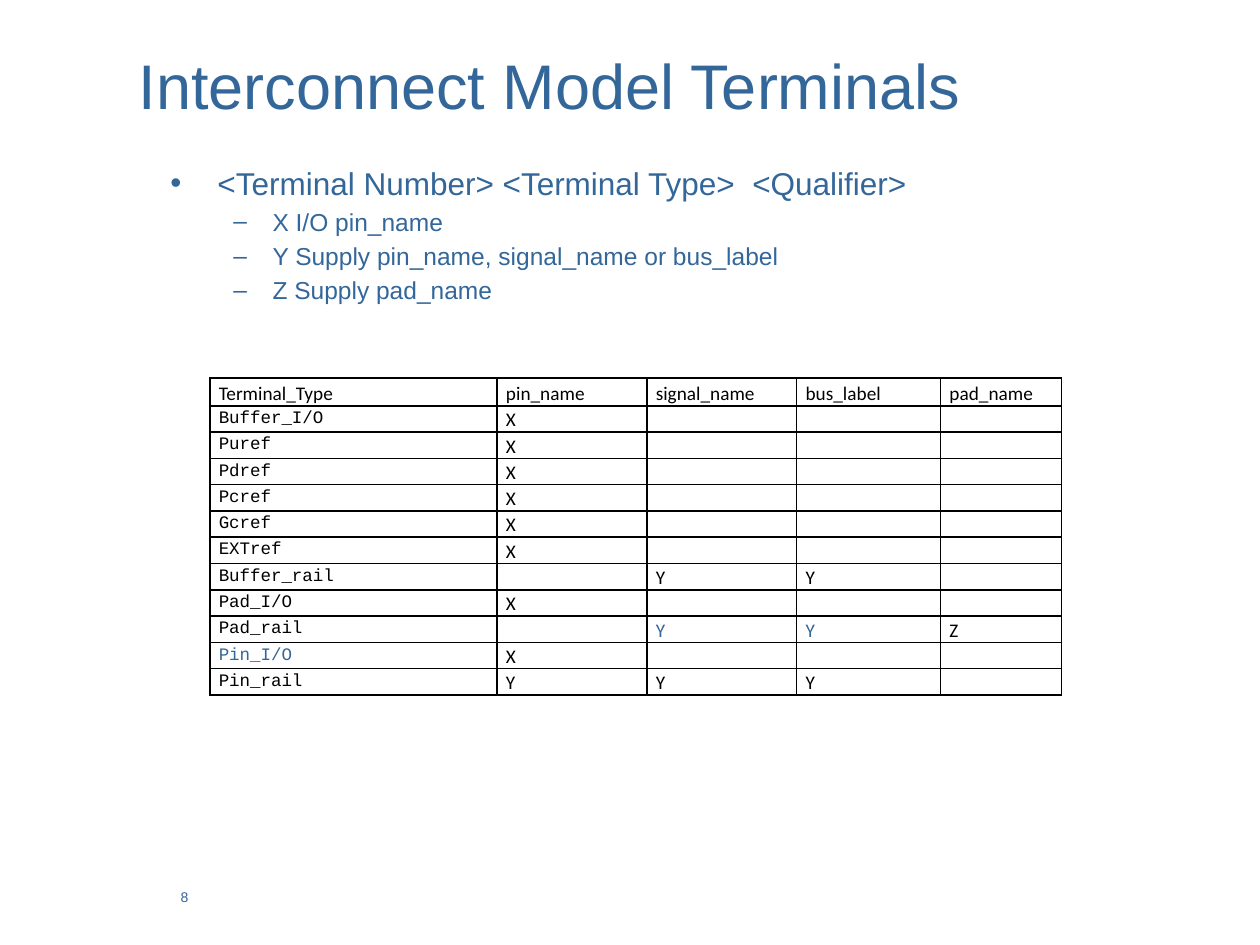
from lxml import etree
from pptx import Presentation
from pptx.dml.color import RGBColor
from pptx.enum.text import MSO_ANCHOR, MSO_AUTO_SIZE, PP_ALIGN
from pptx.oxml.ns import qn
from pptx.util import Cm, Pt

TOP, MIDDLE, BOTTOM = MSO_ANCHOR.TOP, MSO_ANCHOR.MIDDLE, MSO_ANCHOR.BOTTOM
LEFT = PP_ALIGN.LEFT
FIXED = MSO_AUTO_SIZE.NONE
COLORS = {"blue": "336699", "black": "000000"}
SANS, TABLE, CODE = "Arial", "Calibri", "Courier New"

POINTS = [
    (0, "<Terminal Number> <Terminal Type>  <Qualifier>"),
    (1, "X I/O pin_name"),
    (1, "Y Supply pin_name, signal_name or bus_label"),
    (1, "Z Supply pad_name"),
]
LEVELS = [("•", 18, 0.95, 0.95), ("–", 14, 2.06, 0.79)]
WIDTHS = [5.79, 3.02, 3.02, 2.9, 2.44]
HEAD = ["Terminal_Type", "pin_name", "signal_name", "bus_label", "pad_name"]
ROWS = [
    ("Buffer_I/O", "X", "", "", ""),
    ("Puref", "X", "", "", ""),
    ("Pdref", "X", "", "", ""),
    ("Pcref", "X", "", "", ""),
    ("Gcref", "X", "", "", ""),
    ("EXTref", "X", "", "", ""),
    ("Buffer_rail", "", "Y", "Y", ""),
    ("Pad_I/O", "X", "", "", ""),
    ("Pad_rail", "", "Y", "Y", "Z"),
    ("Pin_I/O", "X", "", "", ""),
    ("Pin_rail", "Y", "Y", "Y", ""),
]
BLUE_CELLS = {(9, 2), (9, 3), (10, 0)}


class Deck:
    def __init__(self):
        self.file = Presentation()
        self.file.slide_width, self.file.slide_height = Cm(25.4), Cm(19.05)
        self.slide = self.file.slides.add_slide(self.file.slide_layouts[1])

    def run(self, para, text, size, font=SANS, color="blue"):
        run = para.add_run()
        run.text = text
        run.font.size = Pt(size)
        run.font.name = font
        run.font.bold = False
        run.font.color.rgb = RGBColor.from_string(COLORS[color])

    def place(self, shape, box, anchor):
        shape.left, shape.top, shape.width, shape.height = map(Cm, box)
        frame = shape.text_frame
        frame.word_wrap = True
        frame.auto_size = FIXED
        frame.vertical_anchor = anchor
        return frame

    def title(self, text, box):
        para = self.place(self.slide.shapes.title, box, MIDDLE).paragraphs[0]
        para.alignment = LEFT
        self.run(para, text, 36)

    def bullets(self, items, box):
        frame = self.place(self.slide.placeholders[1], box, TOP)
        for i, (level, text) in enumerate(items):
            para = frame.add_paragraph() if i else frame.paragraphs[0]
            mark, size, margin, hang = LEVELS[level]
            para.level = level
            props = para._p.get_or_add_pPr()
            props.set("marL", str(Cm(margin)))
            props.set("indent", str(-Cm(hang)))
            etree.SubElement(props, qn("a:buChar"), char=mark)
            para.space_before = Pt(0.2 * size if i else 0)
            self.run(para, text, size)

    def label(self, text, box):
        shape = self.slide.shapes.add_textbox(*map(Cm, box))
        self.run(self.place(shape, box, TOP).paragraphs[0], text, 8)

    def cell(self, cell, text, size, font, color, anchor):
        cell.margin_left = cell.margin_right = Cm(0.18)
        cell.margin_top = cell.margin_bottom = 0
        cell.vertical_anchor = anchor
        cell.fill.background()
        para = cell.text_frame.paragraphs[0]
        if text:
            self.run(para, text, size, font, color)
        else:
            etree.SubElement(para._p, qn("a:endParaRPr"), sz=str(size * 100))
        props = cell._tc.get_or_add_tcPr()
        for i, side in enumerate(("lnL", "lnR", "lnT", "lnB")):
            line = etree.Element(qn("a:" + side), w=str(Pt(1)))
            fill = etree.SubElement(line, qn("a:solidFill"))
            etree.SubElement(fill, qn("a:srgbClr"), val=COLORS["black"])
            props.insert(i, line)

    def table(self, rows, widths, left, top):
        heights = [0.56] + [0.53] * (len(rows) - 1)
        size = (sum(widths), sum(heights))
        grid = self.slide.shapes.add_table(
            len(rows), len(widths), *map(Cm, (left, top, *size))).table
        grid.first_row = grid.horz_banding = False
        for col, width in zip(grid.columns, widths):
            col.width = Cm(width)
        for r, (row, height) in enumerate(zip(rows, heights)):
            grid.rows[r].height = Cm(height)
            for c, text in enumerate(row):
                color = "blue" if (r, c) in BLUE_CELLS else "black"
                name = r > 0 and c == 0
                style = (10, CODE, color, MIDDLE) if name else (11, TABLE, color, BOTTOM)
                self.cell(grid.cell(r, c), text, *style)


def main():
    deck = Deck()
    deck.title("Interconnect Model Terminals", (2.54, 0.42, 19.47, 2.54))
    deck.bullets(POINTS, (3.18, 3.18, 19.9, 10.16))
    deck.label("8", (3.39, 17.78, 13.12, 0.88))
    deck.table([HEAD, *ROWS], WIDTHS, 4.23, 7.62)
    deck.file.save("out.pptx")


if __name__ == "__main__":
    main()
